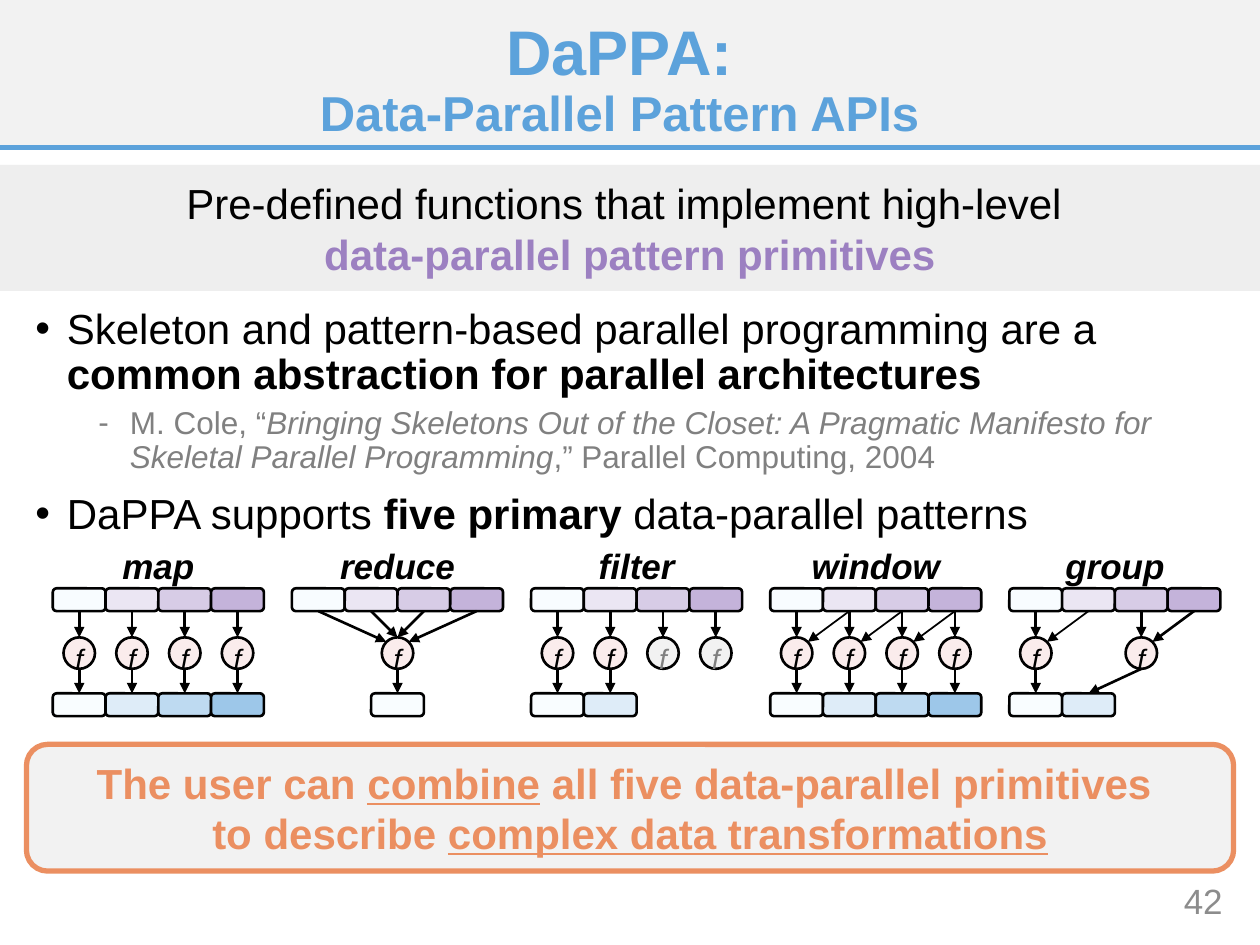
"""Build the slide about data-parallel pattern APIs."""
from dataclasses import dataclass
from typing import Any, NamedTuple

from lxml import etree
from pptx import Presentation
from pptx.dml.color import RGBColor
from pptx.enum.dml import MSO_LINE
from pptx.enum.shapes import MSO_CONNECTOR, MSO_SHAPE
from pptx.enum.text import MSO_ANCHOR, MSO_AUTO_SIZE, PP_ALIGN
from pptx.oxml.ns import qn
from pptx.util import Pt

RECTANGLE, ROUNDED, OVAL = MSO_SHAPE.RECTANGLE, MSO_SHAPE.ROUNDED_RECTANGLE, MSO_SHAPE.OVAL
STRAIGHT, SOLID = MSO_CONNECTOR.STRAIGHT, MSO_LINE.SOLID
TOP, MIDDLE = MSO_ANCHOR.TOP, MSO_ANCHOR.MIDDLE
CENTER, LEFT, RIGHT = PP_ALIGN.CENTER, PP_ALIGN.LEFT, PP_ALIGN.RIGHT
NO_FIT = MSO_AUTO_SIZE.NONE

BLACK, GRAY, PALE = "000000", "808080", "F2F2F2"
BLUE, PURPLE, ORANGE = "5CA2DB", "9C80C1", "EB8F61"
INPUT_FILLS = ("F8FCFF", "EBE6F3", "D7CCE6", "C4B3DA")
OUTPUT_FILLS = ("F9FDFF", "DEECF8", "BEDAF1", "9DC7E9")

PANEL_LEFT, PANEL_STEP = 30.2, 136.65
CELL_WIDTH, CELL_HEIGHT, CIRCLE = 30.15, 13, 18
LABEL_TOP, INPUT_TOP, CIRCLE_TOP, OUTPUT_TOP = 314.6, 336.2, 364.2, 396.2


class Box(NamedTuple):
    left: float
    top: float
    width: float
    height: float


class Span(NamedTuple):
    text: str
    size: float
    color: str = BLACK
    bold: bool = False
    italic: bool = False
    underline: bool = False


class Bullet(NamedTuple):
    mark: str
    level: int
    indent: float
    before: float
    spans: list[Span]


class Arrow(NamedTuple):
    source: float
    target: float
    weight: float = 1.5


@dataclass(frozen=True)
class Pattern:
    name: str
    functions: tuple[float, ...]
    outputs: tuple[float, ...]
    inputs: tuple[Arrow, ...]
    results: tuple[Arrow, ...]
    inactive: tuple[float, ...] = ()


EACH = tuple(Arrow(slot, slot) for slot in range(4))
NEIGHBORS = tuple(Arrow(slot + 1, slot, 1) for slot in range(3))
PATTERNS = (
    Pattern("map", (0, 1, 2, 3), (0, 1, 2, 3), EACH, EACH),
    Pattern("reduce", (1.5,), (1.5,), tuple(Arrow(slot, 1.5) for slot in range(4)), (Arrow(1.5, 1.5),)),
    Pattern("filter", (0, 1, 2, 3), (0, 1), EACH, EACH[:2], (2, 3)),
    Pattern("window", (0, 1, 2, 3), (0, 1, 2, 3), NEIGHBORS + EACH, EACH),
    Pattern("group", (0, 2), (0, 1), (NEIGHBORS[0], EACH[0], EACH[2], Arrow(3, 2)), (EACH[0], Arrow(2, 1))),
)

BULLETS = (
    Bullet("•", 0, 18, 0, [
        Span("Skeleton and pattern-based parallel programming are a ", 24),
        Span("common abstraction for parallel architectures", 24, bold=True)]),
    Bullet("-", 1, 54, 5, [
        Span("M. Cole, “", 18, GRAY),
        Span("Bringing Skeletons Out of the Closet: A Pragmatic Manifesto for "
             "Skeletal Parallel Programming", 18, GRAY, italic=True),
        Span(",” Parallel Computing, 2004", 18, GRAY)]),
    Bullet("•", 0, 18, 10, [
        Span("DaPPA supports ", 24), Span("five primary ", 24, bold=True),
        Span("data-parallel patterns", 24)]),
)


def rgb(color: str) -> RGBColor:
    return RGBColor.from_string(color)


def apply(target: Any, **formats: Any) -> None:
    for name, value in formats.items():
        setattr(target, name, value)


def place(shape: Any, box: Box) -> None:
    apply(shape, **{name: Pt(value) for name, value in box._asdict().items()})


def write_spans(paragraph: Any, spans: list[Span]) -> None:
    for span in spans:
        if span.text == "\n":
            paragraph.add_line_break()
            continue
        run = paragraph.add_run()
        run.text = span.text
        apply(run.font, name="Arial", size=Pt(span.size), bold=span.bold,
              italic=span.italic, underline=span.underline)
        run.font.color.rgb = rgb(span.color)


def write_text(shape: Any, spans: list[Span], align: Any = CENTER, anchor: Any = MIDDLE) -> None:
    apply(shape.text_frame, word_wrap=True, vertical_anchor=anchor, auto_size=NO_FIT)
    paragraph = shape.text_frame.paragraphs[0]
    paragraph.alignment = align
    write_spans(paragraph, spans)


def add_block(shapes: Any, kind: Any, box: Box, fill: str, line: str = "", weight: float = 1.5) -> Any:
    shape = shapes.add_shape(kind, *map(Pt, box))
    shape.shadow.inherit = False
    shape.fill.solid()
    shape.fill.fore_color.rgb = rgb(fill)
    if line:
        shape.line.color.rgb = rgb(line)
        shape.line.width = Pt(weight)
    else:
        shape.line.fill.background()
    return shape


def add_text(shapes: Any, box: Box, span: Span, align: Any = CENTER) -> None:
    write_text(shapes.add_textbox(*map(Pt, box)), [span], align)


def add_line(shapes: Any, start: tuple, end: tuple, color: str, weight: float, arrow: bool = True) -> None:
    line = shapes.add_connector(STRAIGHT, *map(Pt, start + end))
    line.line.color.rgb = rgb(color)
    apply(line.line, width=Pt(weight), dash_style=SOLID)
    if arrow:
        etree.SubElement(line.line._get_or_add_ln(), qn("a:tailEnd"), type="triangle")
    etree.SubElement(line.element.spPr, qn("a:effectLst"))


def draw_pattern(page: Any, pattern: Pattern, left: float) -> None:
    shapes = page.shapes.add_group_shape().shapes

    def center(slot: float) -> float:
        return left + (slot + 0.5) * CELL_WIDTH

    def add_cells(slots: Any, top: float, fills: tuple[str, ...]) -> None:
        for slot, fill in zip(slots, fills):
            box = Box(left + slot * CELL_WIDTH, top, CELL_WIDTH, CELL_HEIGHT)
            add_block(shapes, ROUNDED, box, fill, BLACK)

    add_cells(range(4), INPUT_TOP, INPUT_FILLS)
    add_cells(pattern.outputs, OUTPUT_TOP, OUTPUT_FILLS)
    for slot in pattern.functions:
        fill, color = (PALE, GRAY) if slot in pattern.inactive else ("FAECEC", BLACK)
        box = Box(center(slot) - CIRCLE / 2, CIRCLE_TOP, CIRCLE, CIRCLE)
        circle = add_block(shapes, OVAL, box, fill, BLACK)
        apply(circle.text_frame, margin_left=0, margin_top=0, margin_right=0, margin_bottom=0)
        write_text(circle, [Span("f", 16, color, italic=True)], anchor=TOP)
    for arrow in pattern.inputs:
        offset = arrow.source - arrow.target
        side = 0 if abs(offset) < 1 else offset / abs(offset)
        end = (center(arrow.target) + side * 6.4, CIRCLE_TOP + abs(side) * 2.6)
        start = (center(arrow.source), INPUT_TOP + CELL_HEIGHT)
        add_line(shapes, start, end, BLACK, arrow.weight)
    for arrow in pattern.results:
        start = (center(arrow.source), CIRCLE_TOP + CIRCLE)
        add_line(shapes, start, (center(arrow.target), OUTPUT_TOP), BLACK, arrow.weight)
    add_text(shapes, Box(left, LABEL_TOP, 4 * CELL_WIDTH, 16.6),
             Span(pattern.name, 20, bold=True, italic=True))


def fill_title(title: Any) -> None:
    place(title, Box(4, 10, 700, 73))
    write_text(title, [Span("DaPPA:", 36, BLUE, True), Span("\n", 36),
                       Span("Data-Parallel Pattern APIs", 28, BLUE, True)])
    title.text_frame.paragraphs[0].line_spacing = 0.9


def fill_body(body: Any) -> None:
    place(body, Box(13, 172.3, 700.5, 206))
    apply(body.text_frame, word_wrap=True, vertical_anchor=TOP, auto_size=NO_FIT)
    for index, bullet in enumerate(BULLETS):
        paragraph = body.text_frame.add_paragraph() if index else body.text_frame.paragraphs[0]
        apply(paragraph, level=bullet.level, alignment=LEFT, line_spacing=0.9,
              space_before=Pt(bullet.before))
        properties = paragraph._p.get_or_add_pPr()
        properties.set("marL", str(Pt(bullet.indent)))
        properties.set("indent", str(Pt(-18)))
        etree.SubElement(properties, qn("a:buFont"), typeface="Arial")
        etree.SubElement(properties, qn("a:buChar"), char=bullet.mark)
        write_spans(paragraph, bullet.spans)


def main() -> None:
    deck = Presentation()
    apply(deck, slide_width=Pt(720), slide_height=Pt(540))
    page = deck.slides.add_slide(deck.slide_layouts[1])
    title, body = page.placeholders
    add_block(page.shapes, RECTANGLE, Box(0, 0, 720, 84.2), PALE)
    add_text(page.shapes, Box(628, 500.4, 77.8, 28.8), Span("42", 20, "8C8C8C"), RIGHT)
    add_line(page.shapes, (0, 84.2), (720, 84.2), BLUE, 3, arrow=False)
    for placeholder, fill in ((body, fill_body), (title, fill_title)):
        fill(placeholder)
        placeholder.element.getparent().append(placeholder.element)
    banner = add_block(page.shapes, RECTANGLE, Box(0, 94.3, 720, 72), "EEEEEE")
    write_text(banner, [Span("Pre-defined functions that implement high-level ", 24), Span("\n", 24),
                        Span("data-parallel pattern primitives", 24, PURPLE, True)])
    callout = add_block(page.shapes, ROUNDED, Box(15.1, 425.4, 689.8, 72.4), PALE, ORANGE, 3)
    write_text(callout, [Span(text, 24, ORANGE, True, underline=underline) for text, underline in (
        ("The user can ", False), ("combine", True), (" all five data-parallel primitives ", False),
        ("\n", False), ("to describe ", False), ("complex data transformations", True))])
    for index, pattern in enumerate(PATTERNS):
        draw_pattern(page, pattern, PANEL_LEFT + index * PANEL_STEP)
    deck.save("out.pptx")


if __name__ == "__main__":
    main()
